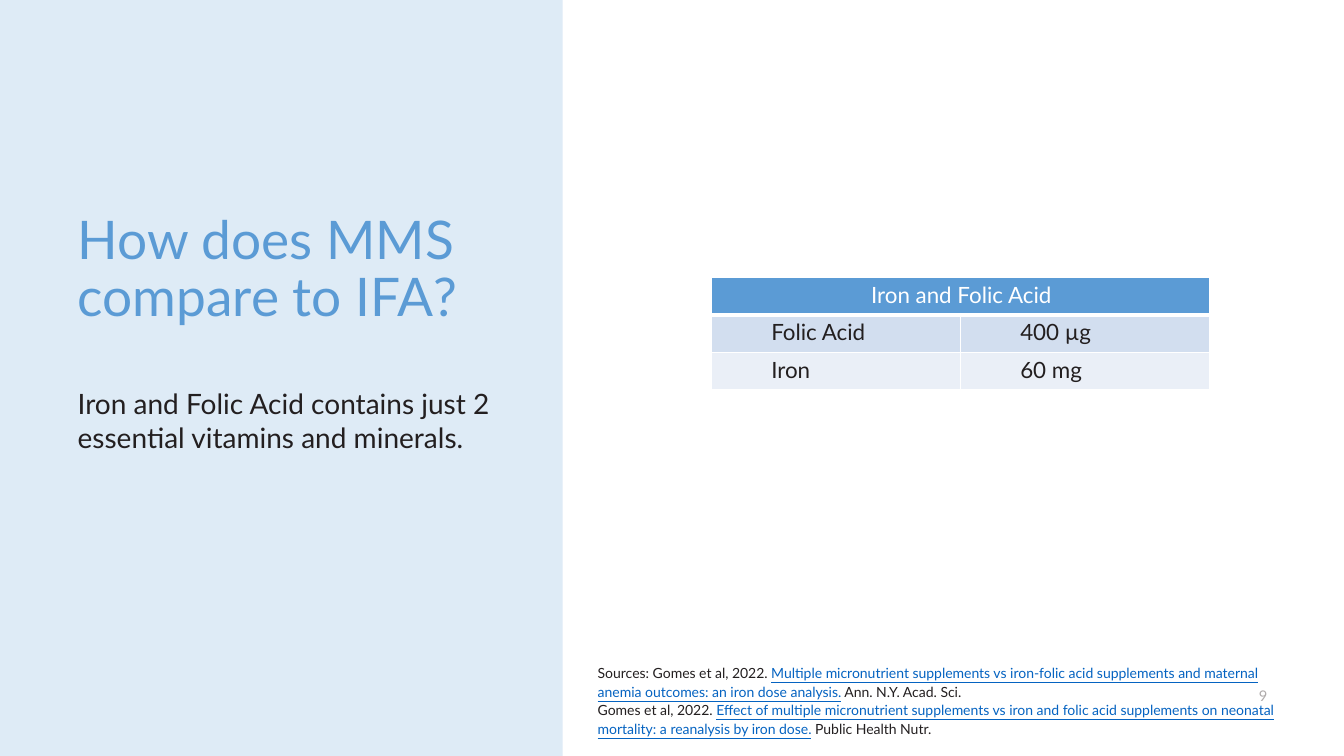
"""Build the slide that compares MMS with iron and folic acid."""
from lxml import etree
from pptx import Presentation
from pptx.dml.color import RGBColor
from pptx.enum.shapes import MSO_SHAPE
from pptx.enum.text import MSO_ANCHOR, PP_ALIGN
from pptx.oxml.ns import qn
from pptx.util import Inches, Pt

RECT = MSO_SHAPE.RECTANGLE
TOP, MIDDLE = MSO_ANCHOR.TOP, MSO_ANCHOR.MIDDLE
LEFT, CENTER, RIGHT = PP_ALIGN.LEFT, PP_ALIGN.CENTER, PP_ALIGN.RIGHT
FONT = "Lato"
COLORS = {
    "blue": "5B9BD5",
    "dark": "231F20",
    "link": "0563C1",
    "grey": "AFABAB",
    "white": "FFFFFF",
    "band1": "D2DEEF",
    "band2": "EAEFF7",
}
ROWS = [("Iron and Folic Acid", ""), ("Folic Acid", "400 µg"), ("Iron", "60 mg")]
ROW_FILLS = ["blue", "band1", "band2"]
SOURCES = [
    ("Sources: Gomes et al, 2022. ",
     "Multiple micronutrient supplements vs iron-folic acid supplements "
     "and maternal anemia outcomes: an iron dose analysis.",
     " Ann. N.Y. Acad. Sci."),
    ("Gomes et al, 2022. ",
     "Effect of multiple micronutrient supplements vs iron and folic acid "
     "supplements on neonatal mortality: a reanalysis by iron dose.",
     " Public Health Nutr."),
]


def rgb(name):
    """Return the named colour."""
    return RGBColor.from_string(COLORS[name])


def add_run(p, text, size, color, underline=None):
    """Append a formatted run to a paragraph."""
    r = p.add_run()
    r.text = text
    r.font.name = FONT
    r.font.size = Pt(size)
    r.font.color.rgb = rgb(color)
    r.font.underline = underline


def add_box(slide, x, y, w, h, anchor=TOP, inset=(0, 0)):
    """Add a wrapping text box and return its text frame."""
    tf = slide.shapes.add_textbox(Inches(x), Inches(y), Inches(w), Inches(h)).text_frame
    tf.word_wrap = True
    tf.vertical_anchor = anchor
    tf.margin_left = tf.margin_right = Inches(inset[0])
    tf.margin_top = tf.margin_bottom = Inches(inset[1])
    return tf


def add_panel(slide, w, h):
    """Add the translucent panel on the left."""
    sp = slide.shapes.add_shape(RECT, 0, 0, Inches(w), Inches(h))
    sp.shadow.inherit = False
    sp.line.fill.background()
    sp.fill.solid()
    sp.fill.fore_color.rgb = rgb("blue")
    color = sp.fill._xPr.find(".//" + qn("a:srgbClr"))
    etree.SubElement(color, qn("a:alpha"), val="20000")


def add_heading(slide):
    """Add the question and its answer."""
    tf = add_box(slide, 0.77, 0.4, 4.39, 5.82, MIDDLE)
    p = tf.paragraphs[0]
    p.line_spacing = 0.9
    add_run(p, "How does MMS compare to IFA?", 38, "blue")
    p = tf.add_paragraph()
    p.space_before = Pt(42)
    add_run(p, "Iron and Folic Acid contains just 2 essential vitamins and minerals.",
            20, "dark")


def set_borders(cell, top, bottom):
    """Give a cell white borders, with widths in points."""
    tcPr = cell._tc.get_or_add_tcPr()
    widths = {"a:lnL": 1, "a:lnR": 1, "a:lnT": top, "a:lnB": bottom}
    for i, (tag, width) in enumerate(widths.items()):
        ln = etree.Element(qn(tag), w=str(Pt(width)))
        fill = etree.SubElement(ln, qn("a:solidFill"))
        etree.SubElement(fill, qn("a:srgbClr"), val=COLORS["white"])
        tcPr.insert(i, ln)


def add_dose_table(slide):
    """Add the table of ingredients and doses."""
    table = slide.shapes.add_table(len(ROWS), 2, Inches(7.06), Inches(2.75),
                                   Inches(4.94), Inches(1.12)).table
    table.cell(0, 0).merge(table.cell(0, 1))
    for i, (row, fill) in enumerate(zip(ROWS, ROW_FILLS)):
        header = i == 0
        for j, text in enumerate(row):
            cell = table.cell(i, j)
            cell.margin_left = cell.margin_right = Inches(0.09)
            cell.margin_top = cell.margin_bottom = Inches(0.04)
            cell.fill.solid()
            cell.fill.fore_color.rgb = rgb(fill)
            set_borders(cell, 3 if i == 1 else 1, 3 if header else 1)
            if not text:
                continue
            p = cell.text_frame.paragraphs[0]
            p.alignment = CENTER if header else LEFT
            p._p.get_or_add_pPr().set("marL", str(Inches(0.01 if header else 0.5)))
            add_run(p, text, 16, "white" if header else "dark")


def add_page_number(slide, number):
    """Add the page number."""
    p = add_box(slide, 12.23, 6.7, 0.34, 0.4, MIDDLE).paragraphs[0]
    p.alignment = RIGHT
    add_run(p, number, 10.5, "grey")


def add_sources(slide):
    """Add the references at the foot."""
    p = add_box(slide, 5.83, 6.53, 7.11, 1.14, inset=(0.1, 0.05)).paragraphs[0]
    p.line_spacing = 1.1
    for i, (authors, title, journal) in enumerate(SOURCES):
        if i:
            p.add_line_break()
        add_run(p, authors, 10, "dark")
        add_run(p, title, 10, "link", True)
        add_run(p, journal, 10, "dark")


def main():
    """Build and save the presentation."""
    prs = Presentation()
    prs.slide_width, prs.slide_height = Inches(13.33), Inches(7.5)
    slide = prs.slides.add_slide(prs.slide_layouts[6])
    add_panel(slide, 5.58, 7.5)
    add_heading(slide)
    add_dose_table(slide)
    add_page_number(slide, "9")
    add_sources(slide)
    prs.save("out.pptx")


if __name__ == "__main__":
    main()
